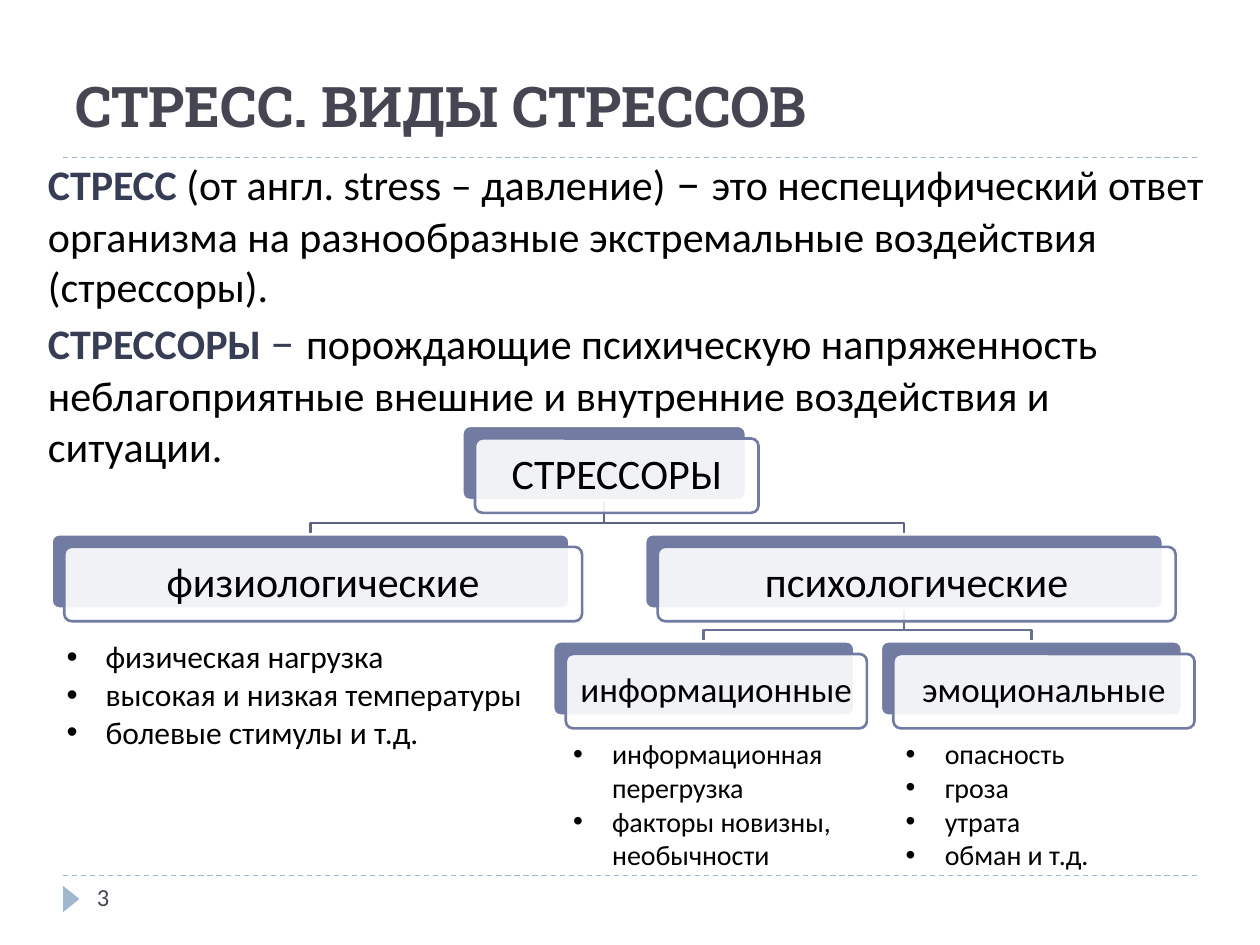
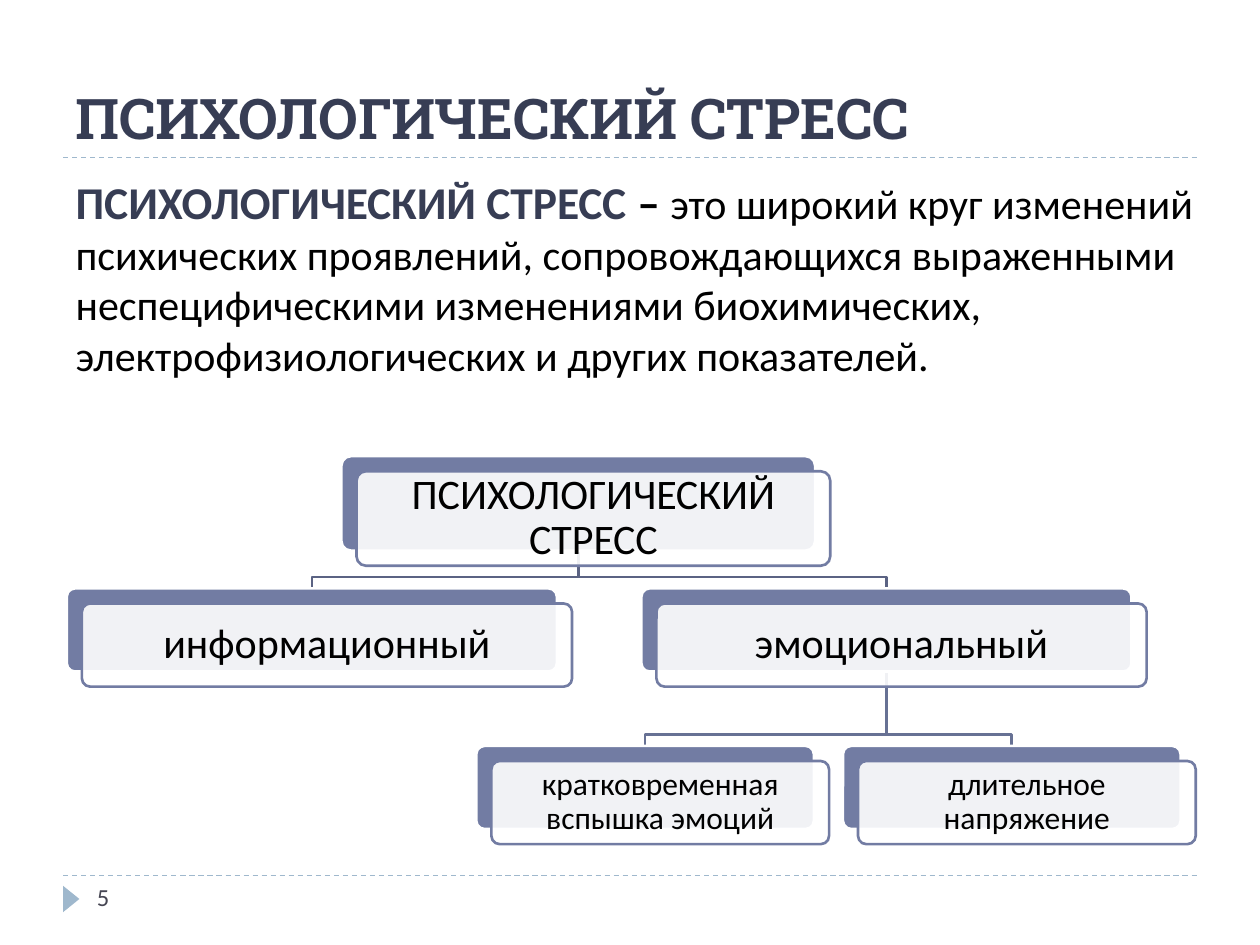
"""Builds two slides on stress, each with a definition and a tree of terms."""
from lxml import etree
from pptx import Presentation
from pptx.dml.color import RGBColor
from pptx.enum.dml import MSO_LINE
from pptx.enum.shapes import MSO_CONNECTOR, MSO_SHAPE
from pptx.enum.text import MSO_ANCHOR, MSO_AUTO_SIZE, PP_ALIGN
from pptx.oxml.ns import qn
from pptx.util import Inches, Pt

DASH = MSO_LINE.DASH
LINE = MSO_CONNECTOR.STRAIGHT
ROUND = MSO_SHAPE.ROUNDED_RECTANGLE
ARROW = MSO_SHAPE.ISOSCELES_TRIANGLE
BASE, MID = MSO_ANCHOR.BOTTOM, MSO_ANCHOR.MIDDLE
FIXED = MSO_AUTO_SIZE.NONE
LEFT, CENTER = PP_ALIGN.LEFT, PP_ALIGN.CENTER

HEAD, TEXT = "Roboto Slab", "Calibri"
BLACK, WHITE, GREY, NAVY = "000000", "FFFFFF", "464653", "373D54"
PALE, BLUE = "9FB8CD", "727CA3"
LINKS = ["5B6383", "677194"]


def paint(color, code):
    color.rgb = RGBColor.from_string(code)


def style(run, size, code=BLACK, bold=False, face=TEXT):
    run.font.name, run.font.size, run.font.bold = face, Pt(size), bold
    paint(run.font.color, code)


slides = [
    {
        "page": "3", "title": "СТРЕСС. ВИДЫ СТРЕССОВ", "ink": GREY, "tall": 0.98,
        "place": (0.28, 1.15, 9.61, 2.74),
        "body": [
            [("СТРЕСС ", 24, NAVY, True),
             ("(от англ. stress – давление)", 24), (" ", 26), ("– ", 28),
             ("это неспецифический ответ организма на разнообразные "
              "экстремальные воздействия (стрессоры).", 24)],
            [("СТРЕССОРЫ ", 24, NAVY, True), ("– ", 28, NAVY),
             ("порождающие психическую напряженность неблагоприятные "
              "внешние и внутренние воздействия и ситуации.", 24)],
        ],
        "shift": 0.1,
        "tree": [
            ("СТРЕССОРЫ", 3.67, 3.38, 2.25, 0.59, 24, None),
            ("физиологические", 0.41, 4.24, 4.11, 0.59, 24, 0),
            ("психологические", 5.12, 4.24, 4.11, 0.59, 24, 0),
            ("информационные", 4.39, 5.09, 2.39, 0.59, 20, 2),
            ("эмоциональные", 6.99, 5.09, 2.39, 0.59, 20, 2),
        ],
        "lists": [
            (0.43, 5.01, 3.86, 1.01, 18,
             ["физическая нагрузка", "высокая и низкая температуры",
              "болевые стимулы и т.д."]),
            (4.45, 5.8, 2.44, 1.18, 16,
             ["информационная перегрузка", "факторы новизны, необычности"]),
            (7.09, 5.8, 2.44, 1.18, 16,
             ["опасность", "гроза", "утрата", "обман и т.д."]),
        ],
    },
    {
        "page": "5", "title": "ПСИХОЛОГИЧЕСКИЙ СТРЕСС", "ink": NAVY, "tall": 1.08,
        "place": (0.5, 1.33, 9.15, 5.4),
        "body": [
            [("ПСИХОЛОГИЧЕСКИЙ СТРЕСС ", 26, NAVY, True), ("– ", 26, BLACK, True),
             ("это широкий круг изменений психических проявлений, "
              "сопровождающихся выраженными неспецифическими изменениями "
              "биохимических, электрофизиологических и других показателей.", 24)],
        ],
        "shift": 0.12,
        "tree": [
            ("ПСИХОЛОГИЧЕСКИЙ СТРЕСС", 2.71, 3.62, 3.76, 0.75, 24, None),
            ("информационный", 0.53, 4.67, 3.89, 0.66, 24, 0),
            ("эмоциональный", 5.09, 4.67, 3.89, 0.66, 24, 0),
            ("кратковременная вспышка эмоций", 3.78, 5.92, 2.68, 0.66, 18, 2),
            ("длительное напряжение", 6.69, 5.92, 2.68, 0.66, 18, 2),
        ],
        "lists": [],
    },
]

deck = Presentation()
deck.slide_width, deck.slide_height = Inches(10), Inches(7.5)

for data in slides:
    slide = deck.slides.add_slide(deck.slide_layouts[1])
    shapes = slide.shapes

    for y in (6.95, 1.25):
        rule = shapes.add_connector(LINE, Inches(0.5), Inches(y), Inches(9.5), Inches(y))
        paint(rule.line.color, PALE)
        rule.line.width, rule.line.dash_style = Pt(0.75), DASH
        etree.SubElement(rule._element.spPr, qn("a:effectLst"))

    mark = shapes.add_shape(ARROW, *map(Inches, (0.46, 7.07, 0.21, 0.13)))
    mark.rotation = 90
    mark.shadow.inherit = False
    mark.fill.solid()
    paint(mark.fill.fore_color, PALE)
    mark.line.fill.background()

    page = shapes.add_textbox(*map(Inches, (0.67, 6.95, 2.17, 0.4)))
    page.text_frame.text = data["page"]
    style(page.text_frame.paragraphs[0].runs[0], 14, GREY)

    title = shapes.title
    title.left, title.top, title.width, title.height = map(
        Inches, (0.5, 0.17, 9, data["tall"]))
    frame = title.text_frame
    frame.text = data["title"]
    frame.auto_size, frame.vertical_anchor = FIXED, BASE
    frame.paragraphs[0].alignment = LEFT
    style(frame.paragraphs[0].runs[0], 32, data["ink"], True, HEAD)

    body = slide.placeholders[1]
    body.left, body.top, body.width, body.height = map(Inches, data["place"])
    frame = body.text_frame
    frame.auto_size = FIXED
    for i, parts in enumerate(data["body"]):
        para = frame.add_paragraph() if i else frame.paragraphs[0]
        props = para._p.get_or_add_pPr()
        props.set("marL", "0")
        props.set("indent", "0")
        etree.SubElement(props, qn("a:buNone"))
        para.space_before = Pt(0)
        for text, *look in parts:
            run = para.add_run()
            run.text = text
            style(run, *look)

    tree, shift = data["tree"], data["shift"]
    for _, left, top, width, _, _, root in reversed(tree):
        if root is None:
            continue
        _, px, py, pw, ph, _, _ = tree[root]
        start, end, bend = px + pw / 2, left + width / 2, top - 0.09
        points = [(start, py + ph), (start, bend), (end, bend), (end, top)]
        points = [(Inches(x), Inches(y)) for x, y in points]
        path = shapes.build_freeform(*points[0])
        path.add_line_segments(points[1:], close=False)
        link = path.convert_to_shape()
        link.shadow.inherit = False
        link.fill.background()
        paint(link.line.color, LINKS[root > 0])
        link.line.width = Pt(1.5)

    for text, left, top, width, height, size, _ in tree:
        for move, fill, edge in ((0, BLUE, WHITE), (shift, WHITE, BLUE)):
            box = shapes.add_shape(ROUND, *map(
                Inches, (left + move, top + move, width, height)))
            box.adjustments[0] = 0.1
            box.shadow.inherit = False
            box.fill.solid()
            paint(box.fill.fore_color, fill)
            paint(box.line.color, edge)
            box.line.width = Pt(1.5)
        tone = box._element.spPr.find(qn("a:solidFill"))[0]
        etree.SubElement(tone, qn("a:alpha"), val="90000")
        frame = box.text_frame
        frame.word_wrap, frame.vertical_anchor = True, MID
        frame.margin_left = frame.margin_right = Inches(0.09)
        frame.margin_top = frame.margin_bottom = Inches(0.09)
        frame.text = text
        para = frame.paragraphs[0]
        para.alignment, para.line_spacing = CENTER, 0.9
        style(para.runs[0], size)

    for left, top, width, height, size, items in data["lists"]:
        frame = shapes.add_textbox(*map(Inches, (left, top, width, height))).text_frame
        frame.word_wrap = True
        for i, item in enumerate(items):
            para = frame.add_paragraph() if i else frame.paragraphs[0]
            para.text = item
            props = para._p.get_or_add_pPr()
            props.set("marL", str(Inches(0.31)))
            props.set("indent", str(Inches(-0.31)))
            etree.SubElement(props, qn("a:buFont"), typeface="Arial")
            etree.SubElement(props, qn("a:buChar"), char="•")
            style(para.runs[0], size)

deck.save("out.pptx")
